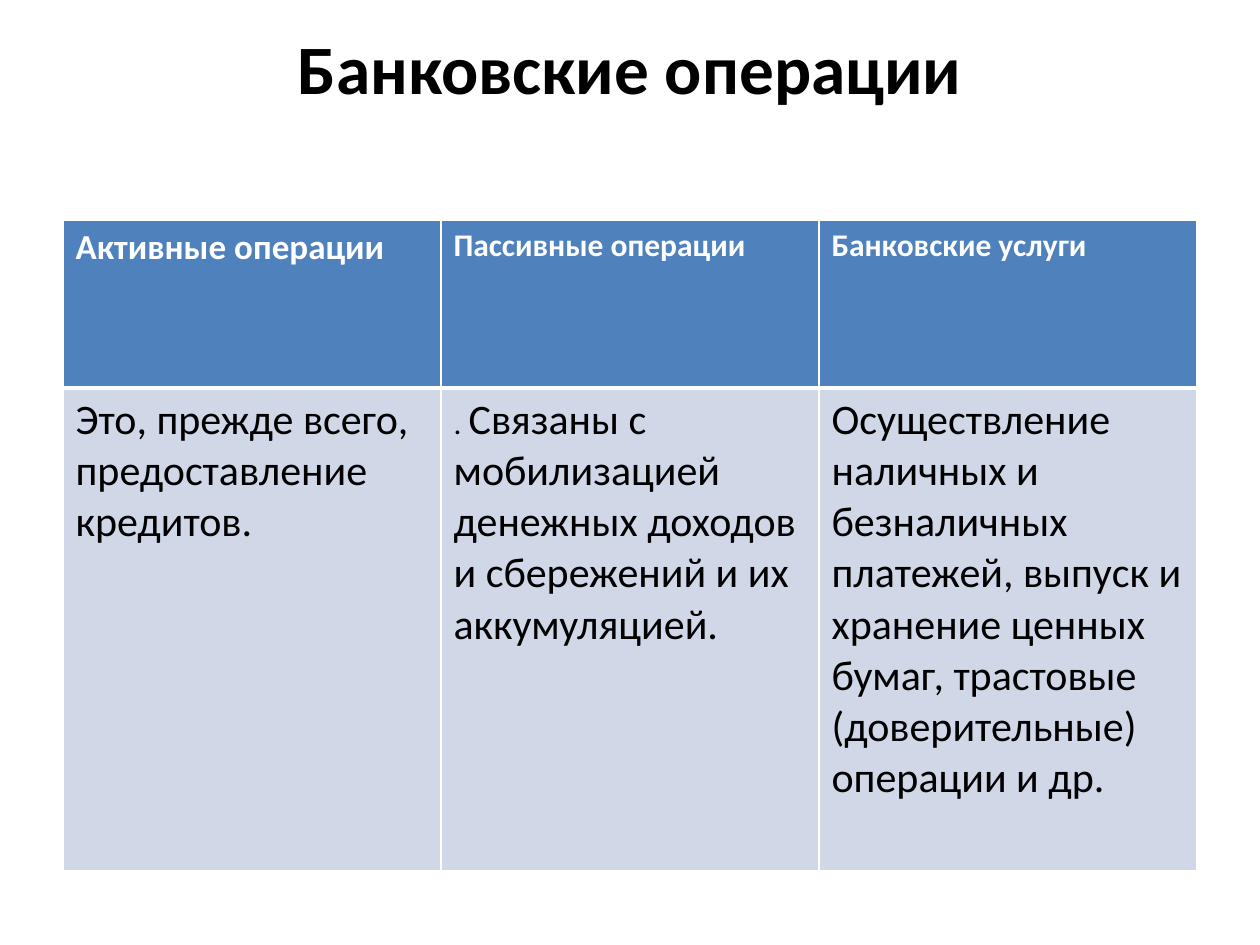
from dataclasses import dataclass

from lxml.etree import SubElement
from pptx import Presentation
from pptx.dml.color import RGBColor
from pptx.enum.text import MSO_ANCHOR, PP_ALIGN
from pptx.oxml.ns import qn
from pptx.util import Emu, Pt

SCALE = 914400 / 126


@dataclass(frozen=True)
class Theme:
    font: str = "Calibri"
    ink: str = "000000"
    paper: str = "FFFFFF"
    head: str = "4F81BD"
    body: str = "D0D8E8"
    title: float = 39.6
    large: int = 24
    medium: int = 20
    small: int = 18
    thin: int = 1
    thick: int = 3


THEME = Theme()

# Each cell is a list of runs: text and type size.
HEADS = [
    [("Активные операции", THEME.medium)],
    [("Пассивные операции", THEME.small)],
    [("Банковские услуги", THEME.small)],
]
BODIES = [
    [("Это, прежде всего, предоставление кредитов.", THEME.large)],
    [
        (". ", THEME.small),
        ("Связаны с мобилизацией денежных доходов и сбережений "
         "и их аккумуляцией.", THEME.large),
    ],
    [("Осуществление наличных и безналичных платежей, выпуск и хранение "
      "ценных бумаг, трастовые (доверительные) операции и др.", THEME.large)],
]


def px(count):
    return Emu(round(count * SCALE))


def write(frame, runs, color, bold):
    line = frame.paragraphs[0]
    for text, size in runs:
        run = line.add_run()
        run.text = text
        font = run.font
        font.name, font.size, font.bold = THEME.font, Pt(size), bold
        font.color.rgb = RGBColor.from_string(color)
    return line


def add_title(slide, text):
    frame = slide.shapes.add_textbox(px(63), px(38), px(1134), px(57)).text_frame
    frame.word_wrap = True
    frame.vertical_anchor = MSO_ANCHOR.MIDDLE
    frame.margin_top = frame.margin_bottom = 0
    line = write(frame, [(text, THEME.title)], THEME.ink, True)
    line.alignment = PP_ALIGN.CENTER


def set_borders(cell, top, bottom):
    """Draw the cell's edges; call before filling, as borders come first in XML."""
    props = cell._tc.get_or_add_tcPr()
    widths = {"L": THEME.thin, "R": THEME.thin, "T": top, "B": bottom}
    for side, width in widths.items():
        edge = SubElement(props, qn(f"a:ln{side}"), w=str(Pt(width)))
        fill = SubElement(edge, qn("a:solidFill"))
        SubElement(fill, qn("a:srgbClr"), val=THEME.paper)


def fill_row(row, texts, fill, color, bold, top, bottom):
    for cell, runs in zip(row.cells, texts):
        set_borders(cell, top, bottom)
        cell.fill.solid()
        cell.fill.fore_color.rgb = RGBColor.from_string(fill)
        write(cell.text_frame, runs, color, bold)


def add_grid(slide):
    heights = (168, 483)
    table = slide.shapes.add_table(
        2, len(HEADS), px(63), px(220), px(1134), px(sum(heights))
    ).table
    for row, height in zip(table.rows, heights):
        row.height = px(height)
    head, body = table.rows
    fill_row(head, HEADS, THEME.head, THEME.paper, True, THEME.thin, THEME.thick)
    fill_row(body, BODIES, THEME.body, THEME.ink, False, THEME.thick, THEME.thin)


def main():
    deck = Presentation()
    deck.slide_width, deck.slide_height = px(1260), px(945)
    slide = deck.slides.add_slide(deck.slide_layouts[6])
    add_title(slide, "Банковские операции")
    add_grid(slide)
    deck.save("out.pptx")


if __name__ == "__main__":
    main()
